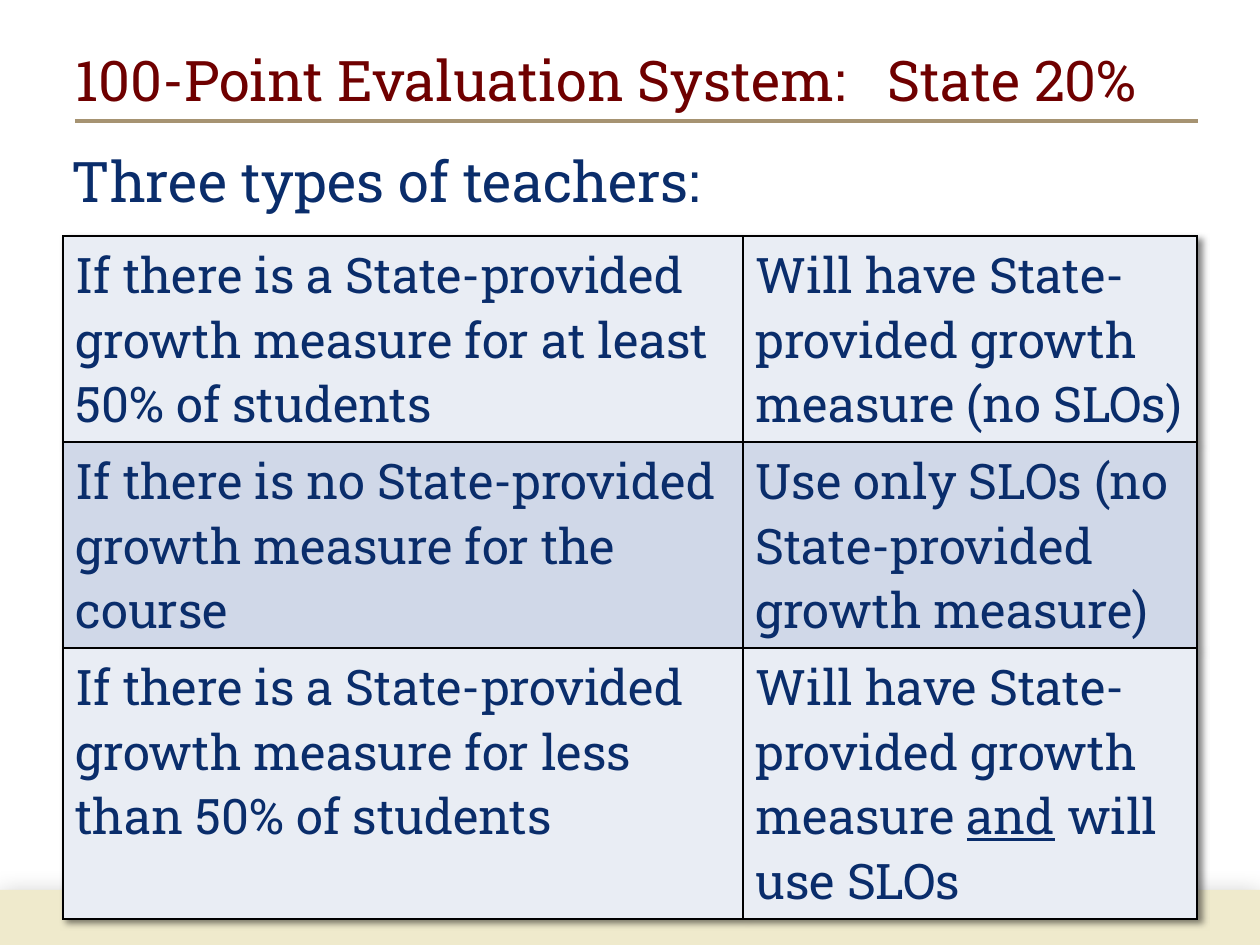
from lxml import etree
from pptx import Presentation
from pptx.dml.color import RGBColor
from pptx.enum.shapes import MSO_CONNECTOR, MSO_SHAPE
from pptx.enum.text import MSO_ANCHOR, MSO_AUTO_SIZE, PP_ALIGN
from pptx.oxml import parse_xml
from pptx.oxml.ns import nsdecls, qn
from pptx.util import Emu, Pt

STRAIGHT = MSO_CONNECTOR.STRAIGHT
RECTANGLE = MSO_SHAPE.RECTANGLE
TOP, MIDDLE = MSO_ANCHOR.TOP, MSO_ANCHOR.MIDDLE
NO_AUTOFIT = MSO_AUTO_SIZE.NONE
LEFT = PP_ALIGN.LEFT

PX_PER_INCH = 126
FONT = "Roboto Slab"
MAROON, NAVY, TAN, CREAM = "6F0000", "0A2D6B", "A69372", "EFEACC"
BAND_FILLS = ("E9EDF4", "D0D8E8")
COLUMN_WIDTHS = (680, 454)
ROW_HEIGHTS = (206, 206, 270)
TEACHER_TYPES = (
    (["If there is a State-provided growth measure for at least 50% of students"],
     ["Will have State-provided growth measure (no SLOs)"]),
    (["If there is no State-provided growth measure for the course"],
     ["Use only SLOs (no State-provided growth measure)"]),
    (["If there is a State-provided growth measure for less than 50% of students"],
     ["Will have State-provided growth measure ", "and", " will use SLOs"]),
)


def px(length):
    """Turn pixels into EMU."""
    return Emu(round(length * 914400 / PX_PER_INCH))


def color(value):
    """Turn a hex string into a colour."""
    return RGBColor.from_string(value)


def place(shape, box):
    """Move and size a shape to a box in pixels."""
    shape.left, shape.top, shape.width, shape.height = map(px, box)


def write(frame, parts, size=28, fill=NAVY, anchor=TOP, underlined=()):
    """Write one left-aligned paragraph from a list of text parts."""
    frame.word_wrap = True
    frame.vertical_anchor = anchor
    para = frame.paragraphs[0]
    para.alignment = LEFT
    para.space_before = Pt(0)
    for part in parts:
        span = para.add_run()
        span.text = part
        span.font.name = FONT
        span.font.size = Pt(size)
        span.font.color.rgb = color(fill)
        if part in underlined:
            span.font.underline = True
    return para


def shadow(blur, distance, degrees, opacity):
    """Build an effect list with one black outer shadow."""
    return parse_xml(
        f'<a:effectLst {nsdecls("a")}><a:outerShdw blurRad="{Pt(blur)}" '
        f'dist="{Pt(distance)}" dir="{degrees * 60000}" algn="ctr" rotWithShape="0">'
        f'<a:srgbClr val="000000"><a:alpha val="{opacity * 1000}"/></a:srgbClr>'
        '</a:outerShdw></a:effectLst>')


def add_heading(page, box):
    """Place the title and the rule along the bottom of its box."""
    left, top, width, height = box
    title = page.shapes.title
    place(title, box)
    title.text_frame.auto_size = NO_AUTOFIT
    write(title.text_frame, ["100-Point Evaluation System:   State 20%"],
          size=32, fill=MAROON, anchor=MIDDLE)
    rule_y = px(top + height)
    rule = page.shapes.add_connector(
        STRAIGHT, px(left + 12), rule_y, px(left + width + 1), rule_y)
    rule.line.color.rgb = color(TAN)
    rule.line.width = Pt(2)
    etree.SubElement(rule._element.spPr, qn("a:effectLst"))


def add_intro(page, box):
    """Place the line that introduces the table."""
    body = page.placeholders[1]
    place(body, box)
    body.text_frame.auto_size = NO_AUTOFIT
    para = write(body.text_frame, ["Three types of teachers:"], size=32)
    para.space_after = Pt(12)
    properties = para._p.get_or_add_pPr()
    properties.set("marL", str(px(48)))
    properties.set("indent", str(px(-48)))
    etree.SubElement(properties, qn("a:buNone"))


def add_footer_band(page, box):
    """Place the cream band at the foot of the page."""
    band = page.shapes.add_shape(RECTANGLE, *map(px, box))
    band.fill.solid()
    band.fill.fore_color.rgb = color(CREAM)
    band.line.fill.background()
    band._element.spPr.append(shadow(15, 3, 90, 25))


def add_borders(cell):
    """Draw a thin black line on each side of a cell."""
    properties = cell._tc.get_or_add_tcPr()
    for index, side in enumerate(("lnL", "lnR", "lnT", "lnB")):
        properties.insert(index, parse_xml(
            f'<a:{side} {nsdecls("a")} w="{Pt(1)}"><a:solidFill>'
            f'<a:srgbClr val="000000"/></a:solidFill></a:{side}>'))


def add_teacher_table(page, box):
    """Place the table of teacher types with alternating row fills."""
    frame = page.shapes.add_table(
        len(ROW_HEIGHTS), len(COLUMN_WIDTHS), *map(px, box))
    table = frame.table
    table.first_row = False
    table._tbl.tblPr.insert(0, shadow(4, 3, 45, 50))
    for column, width in zip(table.columns, COLUMN_WIDTHS):
        column.width = px(width)
    for index, (row, texts) in enumerate(zip(table.rows, TEACHER_TYPES)):
        row.height = px(ROW_HEIGHTS[index])
        for cell, parts in zip(row.cells, texts):
            cell.fill.solid()
            cell.fill.fore_color.rgb = color(BAND_FILLS[index % 2])
            add_borders(cell)
            write(cell.text_frame, parts, underlined=("and",))


def main():
    """Build the deck and save it."""
    deck = Presentation()
    deck.slide_width, deck.slide_height = px(1260), px(945)
    page = deck.slides.add_slide(deck.slide_layouts[1])
    add_heading(page, (63, 38, 1134, 83))
    add_intro(page, (59, 140, 1055, 96))
    add_footer_band(page, (0, 890, 1260, 55))
    add_teacher_table(page, (63, 236, sum(COLUMN_WIDTHS), sum(ROW_HEIGHTS)))
    deck.save("out.pptx")


if __name__ == "__main__":
    main()
